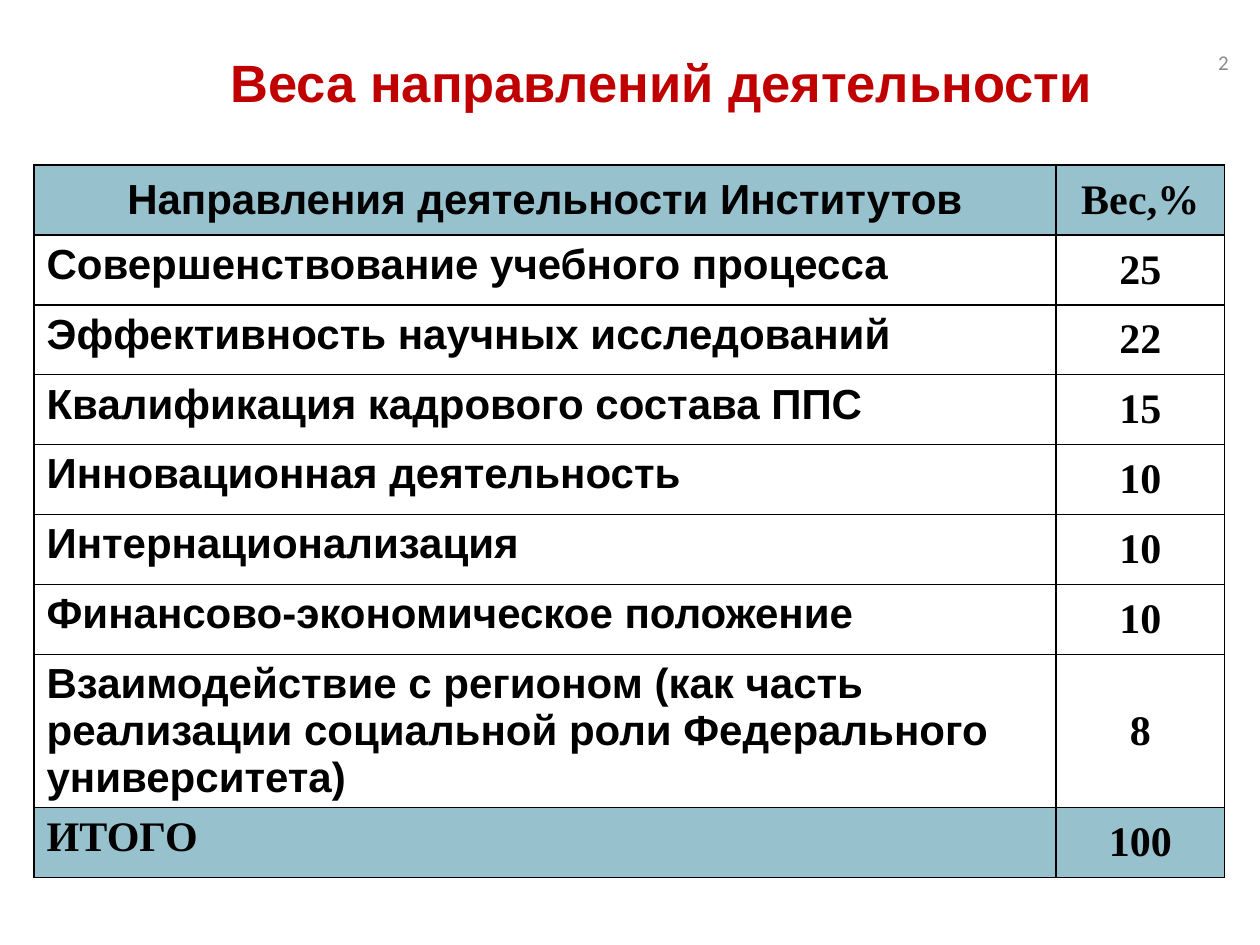
"""Builds the slide with the weights of the institutes' activity areas."""
from dataclasses import dataclass
from typing import Any

from lxml import etree
from pptx import Presentation
from pptx import util as u
from pptx.dml.color import RGBColor
from pptx.enum import text
from pptx.oxml.ns import qn

ROWS = [
    ("Направления деятельности Институтов", "Вес,%"),
    ("Совершенствование учебного процесса", "25"),
    ("Эффективность научных исследований", "22"),
    ("Квалификация кадрового состава ППС", "15"),
    ("Инновационная деятельность", "10"),
    ("Интернационализация", "10"),
    ("Финансово-экономическое положение", "10"),
    ("Взаимодействие с регионом (как часть реализации социальной роли "
     "Федерального университета)", "8"),
    ("ИТОГО", "100"),
]
COLUMN_WIDTHS = (8.11, 1.34)
ROW_HEIGHT, TALL_ROW_HEIGHT, TALL_ROW = 0.555, 1.21, 7


def color(value):
    """Turn a hex string into a colour."""
    return RGBColor.from_string(value)


@dataclass
class SlideBuilder:
    """Holds the style and the current slide."""
    slide: Any
    sans: str = "Arial"
    serif: str = "Times New Roman"
    number_font: str = "Calibri"
    ink: str = "000000"
    title_color: str = "C00000"
    number_color: str = "8C8C8C"
    band: str = "31859C"
    band_alpha: int = 50

    def add_text(self, frame, content, font, size, ink, bold=False, align=text.PP_ALIGN.LEFT):
        """Add one run to the first paragraph of a frame."""
        paragraph = frame.paragraphs[0]
        paragraph.alignment = align
        run = paragraph.add_run()
        run.text = content
        run.font.name = font
        run.font.size = u.Pt(size)
        run.font.bold = bold
        run.font.color.rgb = color(ink)

    def label(self, box, content, *style, **options):
        """Add a vertically centred text box."""
        frame = self.slide.shapes.add_textbox(*map(u.Inches, box)).text_frame
        frame.word_wrap = True
        frame.vertical_anchor = text.MSO_ANCHOR.MIDDLE
        self.add_text(frame, content, *style, **options)

    def border(self, cell):
        """Draw a thin line on all four sides of a cell."""
        properties = cell._tc.get_or_add_tcPr()
        for index, side in enumerate(("a:lnL", "a:lnR", "a:lnT", "a:lnB")):
            line = etree.Element(qn(side), w=str(u.Pt(1)))
            fill = etree.SubElement(line, qn("a:solidFill"))
            etree.SubElement(fill, qn("a:srgbClr"), val=self.ink)
            properties.insert(index, line)

    def shade(self, cell, shaded):
        """Give a cell the translucent band or no fill."""
        if not shaded:
            cell.fill.background()
            return
        cell.fill.solid()
        cell.fill.fore_color.rgb = color(self.band)
        tint = cell._tc.tcPr.find(qn("a:solidFill")).find(qn("a:srgbClr"))
        etree.SubElement(tint, qn("a:alpha"), val=str(self.band_alpha * 1000))

    def table(self, left, top, rows):
        """Add the table of weights with a shaded first and last row."""
        heights = [TALL_ROW_HEIGHT if index == TALL_ROW else ROW_HEIGHT
                   for index in range(len(rows))]
        size = (sum(COLUMN_WIDTHS), sum(heights))
        table = self.slide.shapes.add_table(
            len(rows), len(COLUMN_WIDTHS), *map(u.Inches, (left, top, *size))).table
        table.first_row = table.horz_banding = False
        for column, width in zip(table.columns, COLUMN_WIDTHS):
            column.width = u.Inches(width)
        last = len(rows) - 1
        for row_index, (row, height) in enumerate(zip(table.rows, heights)):
            row.height = u.Inches(height)
            for column_index, cell in enumerate(row.cells):
                centred = column_index == 1 or row_index == 0
                serif = column_index == 1 or row_index == last
                cell.vertical_anchor = text.MSO_ANCHOR.MIDDLE if centred else text.MSO_ANCHOR.TOP
                self.add_text(cell.text_frame, rows[row_index][column_index],
                              self.serif if serif else self.sans, 24, self.ink, bold=True,
                              align=text.PP_ALIGN.CENTER if centred else text.PP_ALIGN.LEFT)
                self.shade(cell, row_index in (0, last))
                self.border(cell)


def main():
    """Build and save the presentation."""
    presentation = Presentation()
    presentation.slide_width = u.Inches(10)
    presentation.slide_height = u.Inches(7.5)
    builder = SlideBuilder(presentation.slides.add_slide(presentation.slide_layouts[6]))
    builder.table(0.27, 1.31, ROWS)
    builder.label((1.73, 0.25, 8.27, 0.79), "Веса направлений деятельности",
                  builder.sans, 30, builder.title_color, bold=True)
    builder.label((9.17, 0.29, 0.68, 0.4), "2", builder.number_font, 12,
                  builder.number_color, align=text.PP_ALIGN.RIGHT)
    presentation.save("out.pptx")


if __name__ == "__main__":
    main()
